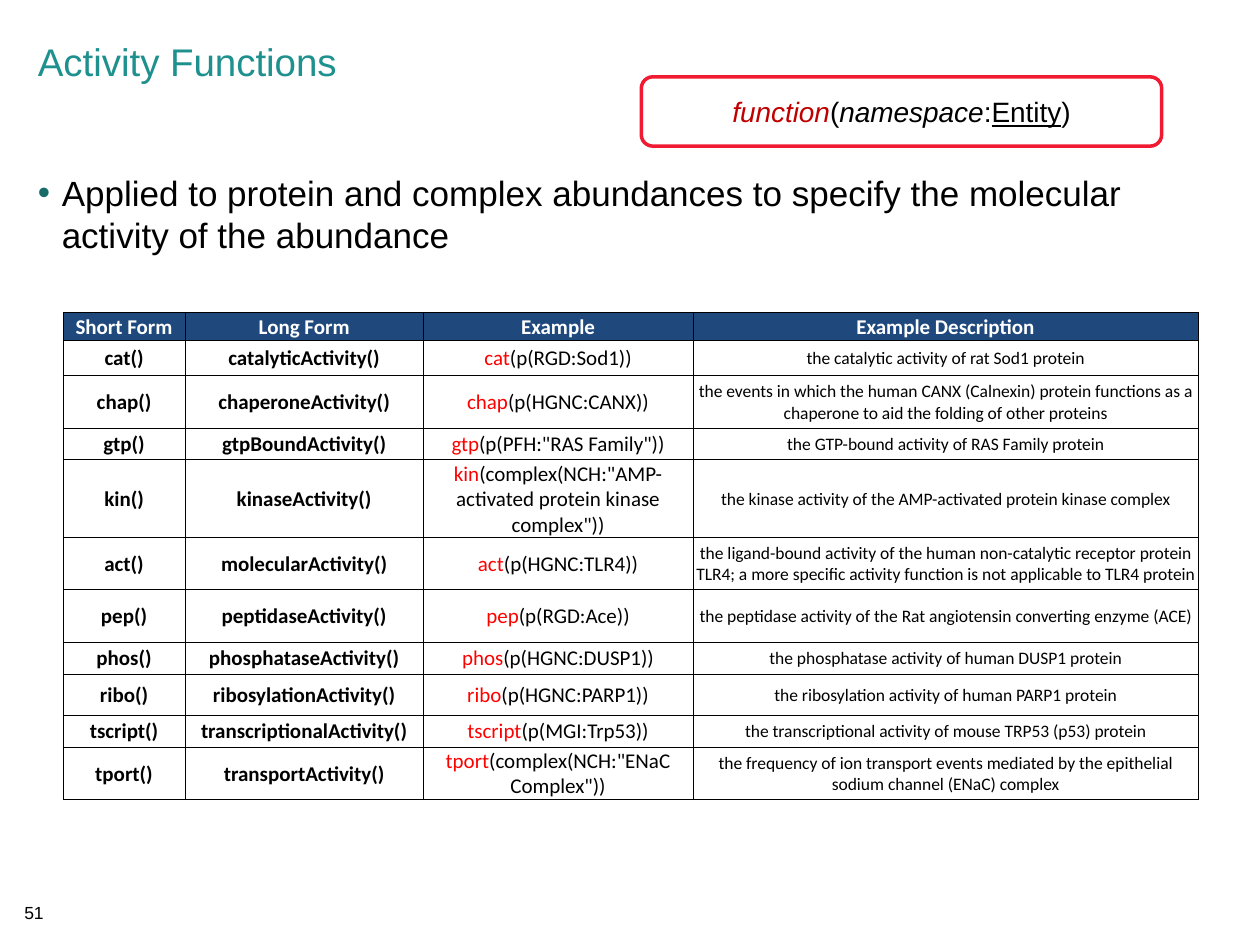
from dataclasses import dataclass

from lxml import etree
from pptx import Presentation
from pptx.dml.color import RGBColor
from pptx.enum import shapes, text
from pptx.oxml import ns
from pptx.util import Inches, Pt

COLORS = {
    "title": "1E908E", "bullet": "176C6A", "text": "000000", "white": "FFFFFF",
    "header": "1F497D", "keyword": "FF0000", "syntax": "C00000", "outline": "F01A32",
}
HEADINGS = ("Short Form", "Long Form", "Example", "Example Description")
COLUMN_WIDTHS = (0.97, 1.89, 2.14, 4.01)
HEADER_HEIGHT = 0.22


@dataclass(frozen=True)
class Activity:
    short: str
    long: str
    argument: str
    description: str
    height: float


@dataclass(frozen=True)
class Span:
    text: str
    color: str = "text"
    italic: bool = False
    underline: bool = False


ACTIVITIES = (
    Activity("cat", "catalyticActivity", "(p(RGD:Sod1))",
             "the catalytic activity of rat Sod1 protein", 0.28),
    Activity("chap", "chaperoneActivity", "(p(HGNC:CANX))",
             "the events in which the human CANX (Calnexin) protein functions as a "
             "chaperone to aid the folding of other proteins", 0.42),
    Activity("gtp", "gtpBoundActivity", '(p(PFH:"RAS Family"))',
             "the GTP-bound activity of RAS Family protein", 0.25),
    Activity("kin", "kinaseActivity", '(complex(NCH:"AMP-activated protein kinase complex"))',
             "the kinase activity of the AMP-activated protein kinase complex", 0.62),
    Activity("act", "molecularActivity", "(p(HGNC:TLR4))",
             "the ligand-bound activity of the human non-catalytic receptor protein TLR4; "
             "a more specific activity function is not applicable to TLR4 protein", 0.41),
    Activity("pep", "peptidaseActivity", "(p(RGD:Ace))",
             "the peptidase activity of the Rat angiotensin converting enzyme (ACE)", 0.42),
    Activity("phos", "phosphataseActivity", "(p(HGNC:DUSP1))",
             "the phosphatase activity of human DUSP1 protein", 0.25),
    Activity("ribo", "ribosylationActivity", "(p(HGNC:PARP1))",
             "the ribosylation activity of human PARP1 protein", 0.33),
    Activity("tscript", "transcriptionalActivity", "(p(MGI:Trp53))",
             "the transcriptional activity of mouse TRP53 (p53) protein", 0.25),
    Activity("tport", "transportActivity", '(complex(NCH:"ENaC Complex"))',
             "the frequency of ion transport events mediated by the epithelial "
             "sodium channel (ENaC) complex", 0.42),
)
SYNTAX = (
    Span("function", "syntax", italic=True), Span("("), Span("namespace", italic=True),
    Span(":"), Span("Entity", underline=True), Span(")"),
)


def rgb(name: str) -> RGBColor:
    return RGBColor.from_string(COLORS[name])


def set_font(font, size: float, color: str = "text", name: str = "Arial", bold: bool = False) -> None:
    font.name, font.size, font.bold = name, Pt(size), bold
    font.color.rgb = rgb(color)


def add_spans(para, spans: tuple[Span, ...]) -> None:
    for item in spans:
        span = para.add_run()
        span.text = item.text
        span.font.color.rgb = rgb(item.color)
        span.font.italic = item.italic
        span.font.underline = item.underline


def place(shape, left: float, top: float, width: float, height: float) -> None:
    shape.left, shape.top = Inches(left), Inches(top)
    shape.width, shape.height = Inches(width), Inches(height)


def add_border(cell) -> None:
    properties = cell._tc.get_or_add_tcPr()
    for index, side in enumerate(("lnL", "lnR", "lnT", "lnB")):
        line = etree.Element(ns.qn(f"a:{side}"), w=str(Pt(0.5)))
        fill = etree.SubElement(line, ns.qn("a:solidFill"))
        etree.SubElement(fill, ns.qn("a:srgbClr"), val=COLORS["text"])
        properties.insert(index, line)


def fill_cell(cell, spans: tuple[Span, ...], size: float, bold: bool, header: bool) -> None:
    cell.margin_left = cell.margin_right = cell.margin_top = Inches(0.01)
    cell.margin_bottom = 0
    cell.vertical_anchor = text.MSO_ANCHOR.MIDDLE
    if header:
        cell.fill.solid()
        cell.fill.fore_color.rgb = rgb("header")
    else:
        cell.fill.background()
    add_border(cell)
    para = cell.text_frame.paragraphs[0]
    para.alignment = text.PP_ALIGN.CENTER
    set_font(para.font, size, name="Calibri", bold=bold)
    add_spans(para, spans)
    for span in para.runs:
        span.font.name, span.font.size, span.font.bold = "Calibri", Pt(size), bold


def add_title(page) -> None:
    title = page.shapes.title
    place(title, 0.2, 0.29, 8.42, 0.9)
    frame = title.text_frame
    frame.text = "Activity Functions"
    frame.auto_size = text.MSO_AUTO_SIZE.NONE
    frame.vertical_anchor = text.MSO_ANCHOR.TOP
    para = frame.paragraphs[0]
    para.alignment = text.PP_ALIGN.LEFT
    para.line_spacing = 0.9
    set_font(para.font, 22, "title")


def add_body(page) -> None:
    body = page.placeholders[1]
    place(body, 0.2, 1.31, 9.5, 5.59)
    frame = body.text_frame
    frame.text = ("Applied to protein and complex abundances to specify "
                  "the molecular activity of the abundance")
    frame.auto_size = text.MSO_AUTO_SIZE.NONE
    para = frame.paragraphs[0]
    properties = para._p.get_or_add_pPr()
    properties.set("marL", str(Inches(0.19)))
    properties.set("indent", str(-Inches(0.19)))
    color = etree.SubElement(properties, ns.qn("a:buClr"))
    etree.SubElement(color, ns.qn("a:srgbClr"), val=COLORS["bullet"])
    etree.SubElement(properties, ns.qn("a:buChar"), char="•")
    para.space_before = Pt(0)
    set_font(para.font, 20)


def add_activity_table(page) -> None:
    heights = (HEADER_HEIGHT, *(activity.height for activity in ACTIVITIES))
    table = page.shapes.add_table(
        len(heights), len(HEADINGS), Inches(0.5), Inches(2.48),
        Inches(sum(COLUMN_WIDTHS)), Inches(sum(heights))).table
    for column, width in zip(table.columns, COLUMN_WIDTHS):
        column.width = Inches(width)
    for row, height in zip(table.rows, heights):
        row.height = Inches(height)
    for column, heading in enumerate(HEADINGS):
        fill_cell(table.cell(0, column), (Span(heading, "white"),), 12, True, True)
    for row, activity in enumerate(ACTIVITIES, start=1):
        contents = (
            ((Span(f"{activity.short}()"),), 12, True),
            ((Span(f"{activity.long}()"),), 12, True),
            ((Span(activity.short, "keyword"), Span(activity.argument)), 12, False),
            ((Span(activity.description),), 10, False),
        )
        for column, (spans, size, bold) in enumerate(contents):
            fill_cell(table.cell(row, column), spans, size, bold, False)


def add_syntax_box(page) -> None:
    box = page.shapes.add_shape(shapes.MSO_SHAPE.ROUNDED_RECTANGLE, Inches(5.09),
                                Inches(0.61), Inches(4.13), Inches(0.55))
    box.shadow.inherit = False
    box.fill.solid()
    box.fill.fore_color.rgb = rgb("white")
    box.line.color.rgb = rgb("outline")
    box.line.width = Pt(2)
    box.text_frame.vertical_anchor = text.MSO_ANCHOR.MIDDLE
    para = box.text_frame.paragraphs[0]
    para.alignment = text.PP_ALIGN.CENTER
    set_font(para.font, 16)
    add_spans(para, SYNTAX)


def add_page_number(page) -> None:
    box = page.shapes.add_textbox(Inches(0.06), Inches(7.11), Inches(0.42), Inches(0.27))
    para = box.text_frame.paragraphs[0]
    para.text = "51"
    para.alignment = text.PP_ALIGN.CENTER
    set_font(para.font, 10)


def main() -> None:
    deck = Presentation()
    deck.slide_width, deck.slide_height = Inches(10), Inches(7.5)
    page = deck.slides.add_slide(deck.slide_layouts[1])
    add_title(page)
    add_body(page)
    add_activity_table(page)
    add_syntax_box(page)
    add_page_number(page)
    deck.save("out.pptx")


if __name__ == "__main__":
    main()
